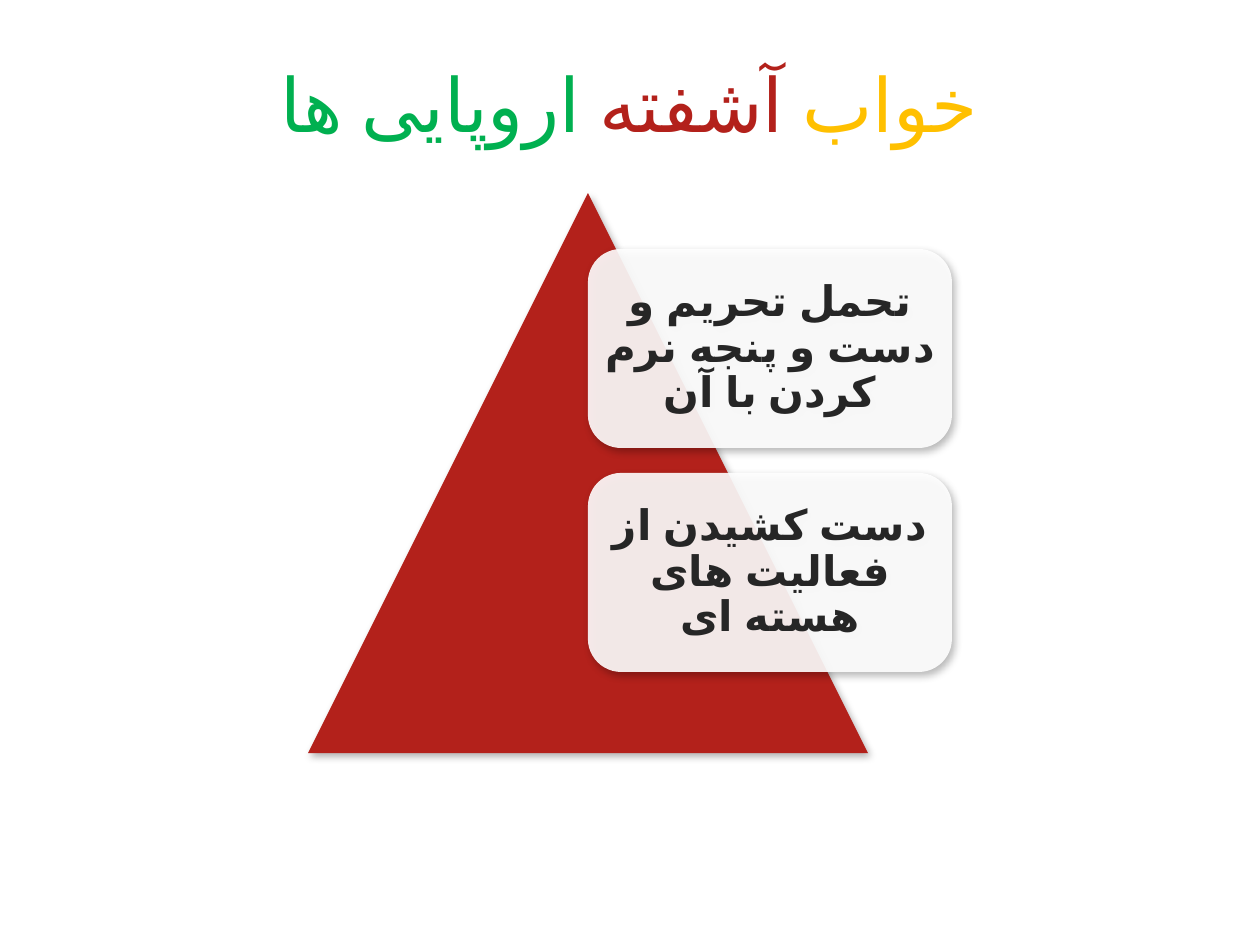
import pptx
import pptx.util
import pptx.dml.color
import pptx.enum.lang
import pptx.enum.shapes
import pptx.enum.text
import pptx.oxml
import pptx.oxml.ns

SCALE = 914400 / 126
FONT = "Roboto"
INK = {"gold": "FFC000", "red": "B3211B", "green": "00B050",
       "white": "FFFFFF", "dark": "262626", "black": "000000"}
TITLE = [("خواب ", "gold"), ("آشفته ", "red"), ("اروپایی ها", "green")]
CARDS = ["تحمل تحریم و دست و پنجه نرم کردن با آن",
         "دست کشیدن از فعالیت های هسته ای"]
KIND = pptx.enum.shapes.MSO_SHAPE


def px(num):
    """Turn pixels into EMU."""
    return pptx.util.Emu(round(num * SCALE))


def hue(name):
    """Look up a colour by name."""
    return pptx.dml.color.RGBColor.from_string(INK[name])


def write(frame, runs, size, bold, pad):
    """Fill a text frame with one centred right-to-left line of runs."""
    frame.word_wrap = True
    frame.auto_size = pptx.enum.text.MSO_AUTO_SIZE.NONE
    frame.vertical_anchor = pptx.enum.text.MSO_ANCHOR.MIDDLE
    frame.margin_left = frame.margin_right = px(pad)
    frame.margin_top = frame.margin_bottom = px(pad)
    para = frame.paragraphs[0]
    para.alignment = pptx.enum.text.PP_ALIGN.CENTER
    para.line_spacing = 0.9
    para._p.get_or_add_pPr().set("rtl", "1")
    for text, name in runs:
        run = para.add_run()
        run.text = text
        font = run.font
        font.name, font.size, font.bold = FONT, pptx.util.Pt(size), bold
        font.color.rgb = hue(name)
        font.language_id = pptx.enum.lang.MSO_LANGUAGE_ID.FARSI


def shade(shape):
    """Give a shape a soft shadow to its lower right."""
    shape.shadow.inherit = False
    glow = pptx.oxml.parse_xml(
        f'<a:outerShdw {pptx.oxml.ns.nsdecls("a")} blurRad="57150" '
        'dist="33020" dir="3180000" algn="ctr" rotWithShape="0">'
        f'<a:srgbClr val="{INK["black"]}"><a:alpha val="30000"/></a:srgbClr>'
        '</a:outerShdw>')
    shape._element.spPr.find(pptx.oxml.ns.qn("a:effectLst")).append(glow)


def block(slide, kind, box, name):
    """Draw a filled shape with a shadow and no line."""
    shape = slide.shapes.add_shape(kind, *map(px, box))
    shape.fill.solid()
    shape.fill.fore_color.rgb = hue(name)
    shape.line.fill.background()
    shade(shape)
    return shape


def head(slide, box):
    """Place the title."""
    title = slide.shapes.title
    title.left, title.top, title.width, title.height = map(px, box)
    write(title.text_frame, TITLE, 42.7, False, 0)


def card(slide, box, text):
    """Draw one see-through card with its text."""
    shape = block(slide, KIND.ROUNDED_RECTANGLE, box, "white")
    tint = shape.fill._xPr.find(pptx.oxml.ns.qn("a:solidFill"))[0]
    tint.append(pptx.oxml.parse_xml(
        f'<a:alpha {pptx.oxml.ns.nsdecls("a")} val="90000"/>'))
    write(shape.text_frame, [(text, "dark")], 24, True, 3)


def cone(slide, box):
    """Draw the triangle and the cards stacked from its middle."""
    left, top, width, height = box
    block(slide, KIND.ISOSCELES_TRIANGLE, box, "red")
    tall = 199
    step = 224
    for row, text in enumerate(CARDS):
        spot = (left + width // 2, top + height // 10 + row * step,
                width * 13 // 20, tall)
        card(slide, spot, text)


def main():
    """Build and save the slide."""
    deck = pptx.Presentation()
    deck.slide_width, deck.slide_height = px(1260), px(945)
    slide = deck.slides.add_slide(deck.slide_layouts[5])
    slide.background.fill.solid()
    slide.background.fill.fore_color.rgb = hue("white")
    head(slide, (53, 63, 1153, 91))
    cone(slide, (308, 193, 560, 560))
    deck.save("out.pptx")


if __name__ == "__main__":
    main()
